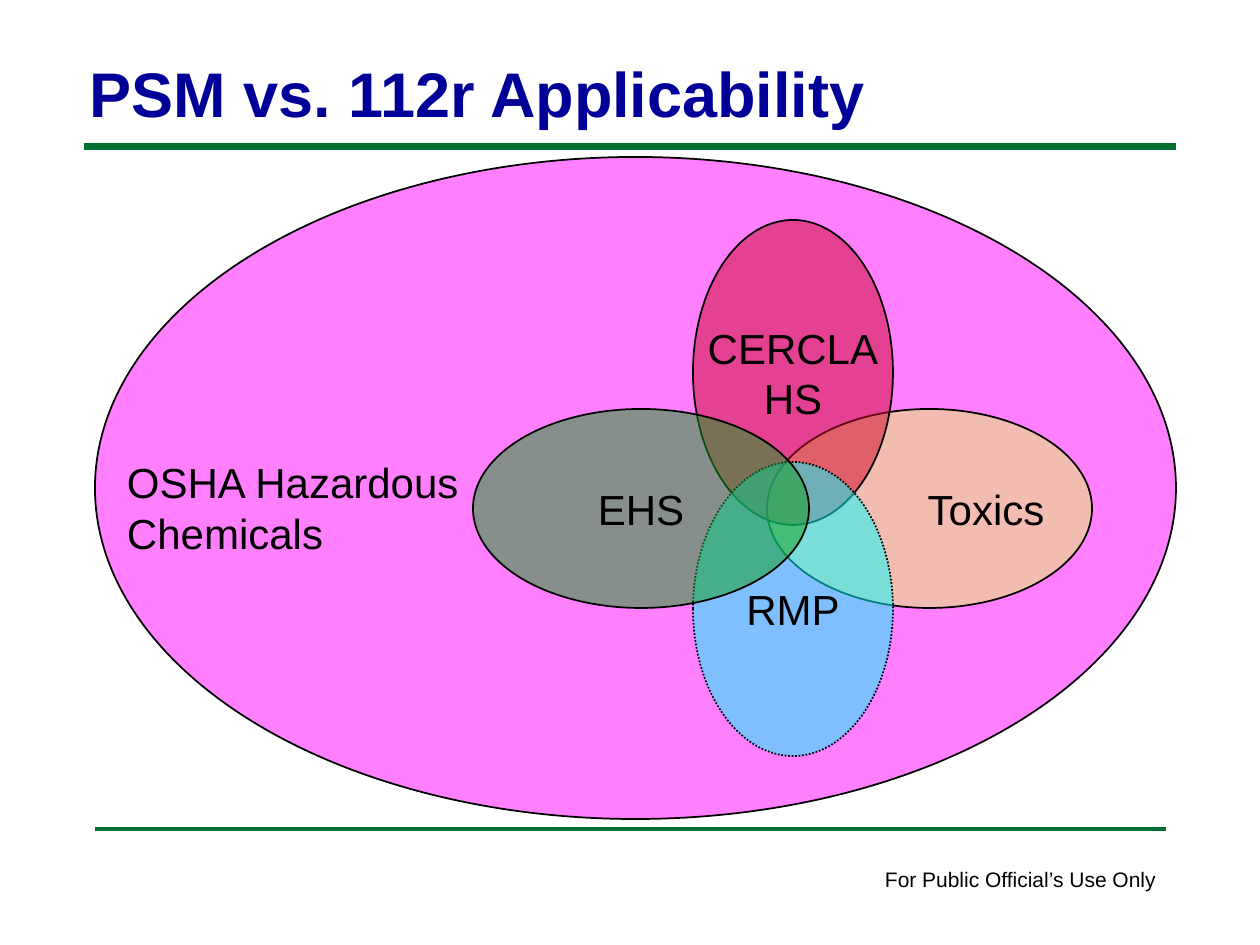
from lxml import etree
from pptx import Presentation
from pptx.dml.color import RGBColor
from pptx.enum.dml import MSO_LINE
from pptx.enum.shapes import MSO_CONNECTOR, MSO_SHAPE
from pptx.enum.text import MSO_ANCHOR, MSO_AUTO_SIZE, PP_ALIGN
from pptx.oxml.ns import qn
from pptx.util import Emu, Pt

OVAL, STRAIGHT = MSO_SHAPE.OVAL, MSO_CONNECTOR.STRAIGHT
DOTS = MSO_LINE.ROUND_DOT
LEFT, CENTER, RIGHT = PP_ALIGN.LEFT, PP_ALIGN.CENTER, PP_ALIGN.RIGHT
TOP, MIDDLE, BOTTOM = MSO_ANCHOR.TOP, MSO_ANCHOR.MIDDLE, MSO_ANCHOR.BOTTOM
FIXED = MSO_AUTO_SIZE.NONE

WHITE = RGBColor(0xFF, 0xFF, 0xFF)
BLACK = RGBColor(0x00, 0x00, 0x00)
NAVY = RGBColor(0x00, 0x00, 0x99)
GREEN = RGBColor(0x00, 0x70, 0x30)
PINK = RGBColor(0xFF, 0x00, 0xFF)
LIME = RGBColor(0xE8, 0xFA, 0x64)
RED = RGBColor(0xCD, 0x05, 0x26)
CYAN = RGBColor(0x00, 0xFF, 0xFF)
LEAF = RGBColor(0x11, 0x9F, 0x1B)


def px(n):
    return Emu(round(n * 914400 / 126))


def write(shape, lines, size, color=BLACK, bold=False, align=LEFT,
          anchor=TOP, pad=(13, 6), wrap=False):
    frame = shape.text_frame
    side, edge = map(px, pad)
    form = {
        "auto_size": FIXED, "word_wrap": wrap, "vertical_anchor": anchor,
        "margin_left": side, "margin_right": side,
        "margin_top": edge, "margin_bottom": edge,
    }
    for name, value in form.items():
        setattr(frame, name, value)
    frame.text = "\n".join(lines)
    face = {"name": "Arial", "size": Pt(size), "bold": bold}
    for para in frame.paragraphs:
        para.alignment = align
        for run in para.runs:
            for name, value in face.items():
                setattr(run.font, name, value)
            run.font.color.rgb = color


def add_rule(slide, left, y, right, width):
    rule = slide.shapes.add_connector(
        STRAIGHT, px(left), px(y), px(right), px(y))
    rule.line.color.rgb = GREEN
    rule.line.width = Pt(width)
    etree.SubElement(rule._element.spPr, qn("a:effectLst"))


def add_label(slide, box, lines, size):
    label = slide.shapes.add_textbox(*map(px, box))
    write(label, lines, size)


def add_oval(slide, box, color, lines=(), dash=None, **form):
    oval = slide.shapes.add_shape(OVAL, *map(px, box))
    oval.shadow.inherit = False
    oval.fill.solid()
    oval.fill.fore_color.rgb = color
    tint = oval._element.spPr.find(qn("a:solidFill"))[0]
    etree.SubElement(tint, qn("a:alpha"), val="50000")
    oval.line.color.rgb = BLACK
    oval.line.width = Pt(1)
    if dash:
        oval.line.dash_style = dash
    if lines:
        look = {"align": CENTER, "anchor": MIDDLE, **form}
        write(oval, lines, 24, **look)


def add_title(slide, box):
    title = slide.shapes.title
    title.left, title.top, title.width, title.height = map(px, box)
    title.fill.solid()
    title.fill.fore_color.rgb = WHITE
    write(title, ["PSM vs. 112r Applicability"], 36, NAVY, True,
          anchor=BOTTOM, pad=(6, 0), wrap=True)


def add_venn(slide, box):
    x, y, w, h = box
    add_oval(slide, box, PINK)
    add_oval(slide, (x + 672, y + 252, 325, 199), LIME, ["Toxics"],
             align=RIGHT, pad=(0, 6), wrap=True)
    add_oval(slide, (x + 598, y + 63, 200, 305), RED, ["CERCLA", "HS"])
    add_oval(slide, (x + 598, y + 305, 200, 294), CYAN, ["RMP"], DOTS)
    add_label(slide, (x + 19, y + 294, 360, 115),
              ["OSHA Hazardous", "Chemicals"], 24)
    add_oval(slide, (x + 378, y + 252, 336, 199), LEAF, ["EHS"])


def add_foot(slide, box):
    x, y, w, h = box
    add_rule(slide, x, y, x + w, 2)
    add_label(slide, (x + w - 294, y + 32, 299, 38),
              ["For Public Official’s Use Only"], 12)


def main():
    deck = Presentation()
    deck.slide_width, deck.slide_height = px(1260), px(945)
    slide = deck.slides.add_slide(deck.slide_layouts[5])
    add_rule(slide, 84, 147, 1176, 4)
    add_foot(slide, (95, 829, 1071, 70))
    add_venn(slide, (95, 157, 1081, 662))
    add_title(slide, (84, 53, 1134, 77))
    deck.save("out.pptx")


if __name__ == "__main__":
    main()
